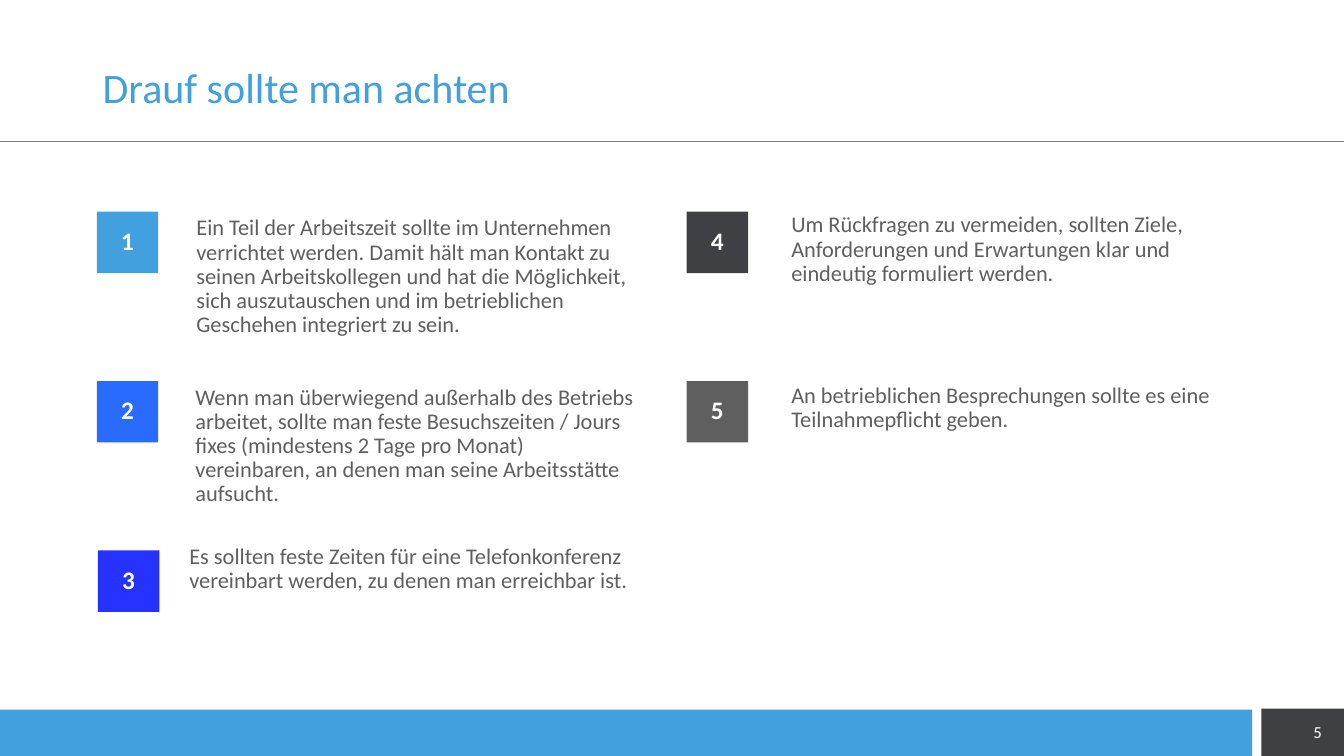
import pptx
import pptx.util
import pptx.dml.color
import pptx.enum.shapes
import pptx.enum.text
import pptx.oxml
import pptx.oxml.ns
from dataclasses import dataclass
from pptx.util import Inches

ALIGN = pptx.enum.text.PP_ALIGN
ANCHOR = pptx.enum.text.MSO_ANCHOR


@dataclass(frozen=True)
class Theme:
    font: str = "Calibri"
    blue: str = "42A0DE"
    royal: str = "2A6BFF"
    deep: str = "2632FF"
    dark: str = "3F4044"
    grey: str = "5F5F5F"
    rule: str = "7F7F7F"
    white: str = "FFFFFF"
    title_size: int = 30
    number_size: int = 18
    body_size: int = 16
    page_size: int = 12


THEME = Theme()
FIRST_ROW, ROW_STEP = 2.1, 1.68
BADGE_SIZE = 0.61

# Column left, row, badge colour, text box (left, top, width, height), text
TIPS = [
    (0.96, 0, THEME.blue, (1.85, 2.1, 4.66, 1.56),
     "Ein Teil der Arbeitszeit sollte im Unternehmen verrichtet werden. "
     "Damit hält man Kontakt zu seinen Arbeitskollegen und hat die Möglichkeit, "
     "sich auszutauschen und im betrieblichen Geschehen integriert zu sein."),
    (0.96, 1, THEME.royal, (1.84, 3.78, 4.61, 1.58),
     "Wenn man überwiegend außerhalb des Betriebs arbeitet, sollte man feste "
     "Besuchszeiten / Jours fixes (mindestens 2 Tage pro Monat) vereinbaren, "
     "an denen man seine Arbeitsstätte aufsucht."),
    (0.97, 2, THEME.deep, (1.78, 5.36, 4.67, 0.59),
     "Es sollten feste Zeiten für eine Telefonkonferenz vereinbart werden, "
     "zu denen man erreichbar ist."),
    (6.81, 0, THEME.dark, (7.75, 2.07, 4.66, 1.1),
     "Um Rückfragen zu vermeiden, sollten Ziele, Anforderungen und Erwartungen "
     "klar und eindeutig formuliert werden."),
    (6.81, 1, THEME.grey, (7.75, 3.76, 4.66, 0.59),
     "An betrieblichen Besprechungen sollte es eine Teilnahmepflicht geben."),
]


def rgb(colour):
    return pptx.dml.color.RGBColor.from_string(colour)


def write(frame, text, size, colour, bold=False, align=ALIGN.LEFT,
          anchor=ANCHOR.TOP, spacing=0.9):
    frame.word_wrap = True
    frame.vertical_anchor = anchor
    paragraph = frame.paragraphs[0]
    paragraph.text = text
    paragraph.alignment = align
    paragraph.line_spacing = spacing
    paragraph.font.name = THEME.font
    paragraph.font.size = pptx.util.Pt(size)
    paragraph.font.bold = bold
    paragraph.font.color.rgb = rgb(colour)


def add_text(slide, box, text, size, colour, **style):
    label = slide.shapes.add_textbox(*map(Inches, box))
    write(label.text_frame, text, size, colour, **style)


def add_block(slide, box, colour):
    block = slide.shapes.add_shape(
        pptx.enum.shapes.MSO_SHAPE.RECTANGLE, *map(Inches, box))
    block.shadow.inherit = False
    block.fill.solid()
    block.fill.fore_color.rgb = rgb(colour)
    block.line.fill.background()
    return block


def add_rule(slide, top, width):
    rule = slide.shapes.add_connector(
        pptx.enum.shapes.MSO_CONNECTOR.STRAIGHT,
        0, Inches(top), Inches(width), Inches(top))
    rule.line.color.rgb = rgb(THEME.rule)
    rule.line.width = pptx.util.Pt(0.5)
    rule._element.spPr.append(pptx.oxml.parse_xml(
        "<a:effectLst %s/>" % pptx.oxml.ns.nsdecls("a")))


def add_tip(slide, number, left, row, colour, box, text):
    add_text(slide, box, text, THEME.body_size, THEME.grey)
    top = FIRST_ROW + row * ROW_STEP
    badge = add_block(slide, (left, top, BADGE_SIZE, BADGE_SIZE), colour)
    write(badge.text_frame, str(number), THEME.number_size, THEME.white,
          bold=True, align=ALIGN.CENTER, anchor=ANCHOR.MIDDLE)


def main():
    deck = pptx.Presentation()
    deck.slide_width, deck.slide_height = Inches(13.33), Inches(7.5)
    slide = deck.slides.add_slide(deck.slide_layouts[6])

    # Footer bars and header rule
    add_block(slide, (12.51, 7.03, 0.82, 0.47), THEME.dark)
    add_block(slide, (0, 7.04, 12.42, 0.46), THEME.blue)
    add_rule(slide, 1.4, 13.33)

    # Numbered tips
    for number, tip in enumerate(TIPS, start=1):
        add_tip(slide, number, *tip)

    # Title and page number
    add_text(slide, (0.92, 0.4, 11.5, 0.98), "Drauf sollte man achten",
             THEME.title_size, THEME.blue, anchor=ANCHOR.MIDDLE)
    add_text(slide, (12.64, 7.06, 0.57, 0.4), "5", THEME.page_size, THEME.white,
             align=ALIGN.RIGHT, anchor=ANCHOR.MIDDLE, spacing=1.0)

    deck.save("out.pptx")


if __name__ == "__main__":
    main()
